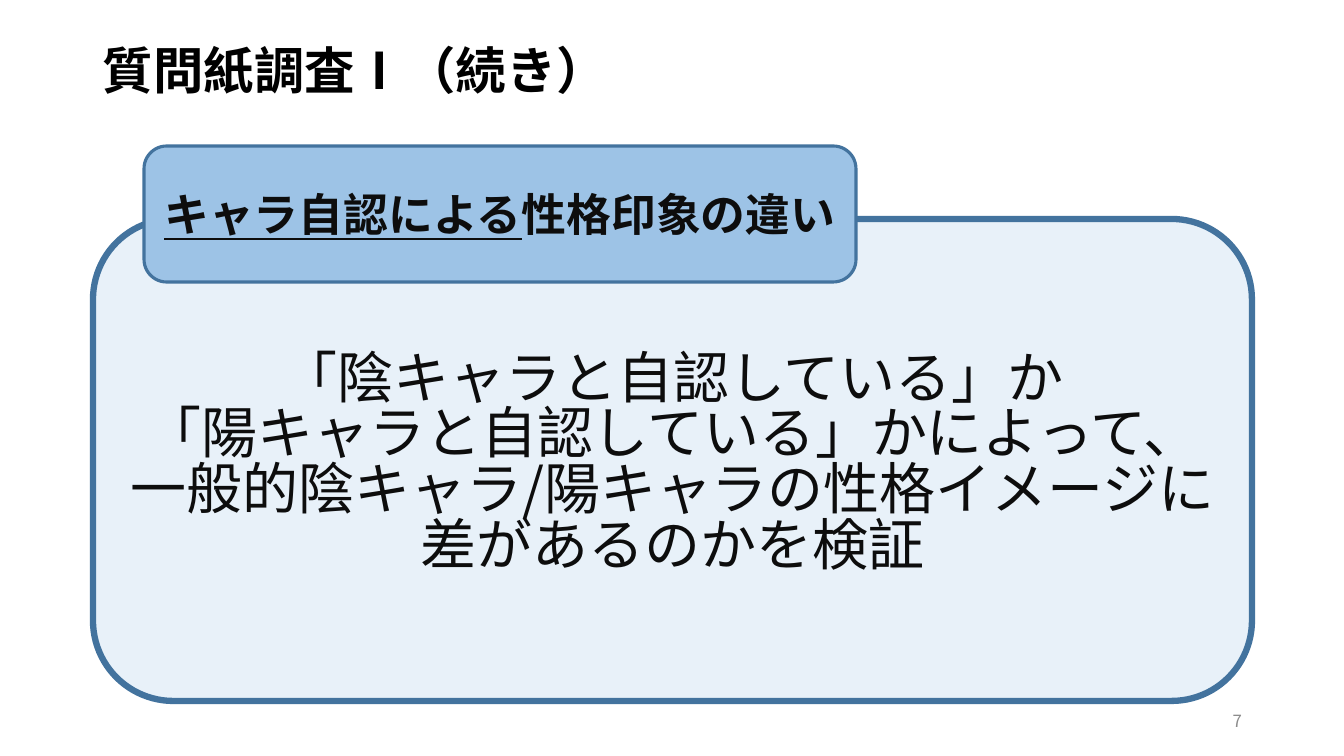
from lxml import etree
from pptx import Presentation
from pptx.dml.color import RGBColor
from pptx.enum.shapes import MSO_SHAPE
from pptx.enum.text import MSO_ANCHOR, PP_ALIGN
from pptx.oxml.ns import qn
from pptx.util import Emu, Pt

ROUNDED = MSO_SHAPE.ROUNDED_RECTANGLE
MIDDLE = MSO_ANCHOR.MIDDLE
LEFT, CENTER, RIGHT = PP_ALIGN.LEFT, PP_ALIGN.CENTER, PP_ALIGN.RIGHT

BLACK = RGBColor(0x00, 0x00, 0x00)
INK = RGBColor(0x0D, 0x0D, 0x0D)
GREY = RGBColor(0x8C, 0x8C, 0x8C)
PALE_BLUE = RGBColor(0xDE, 0xEB, 0xF7)
MID_BLUE = RGBColor(0x9D, 0xC3, 0xE6)
EDGE_BLUE = RGBColor(0x43, 0x73, 0x9E)

JP_FONT = "Noto Sans CJK JP"
TITLE_FONT = "Arial"
EMU_PER_PX = 914400 / 100.8


def px(n):
    return Emu(round(n * EMU_PER_PX))


def set_frame(shape, top_inset=5):
    tf = shape.text_frame
    tf.word_wrap = True
    tf.vertical_anchor = MIDDLE
    tf.margin_left = tf.margin_right = px(10)
    tf.margin_top, tf.margin_bottom = px(top_inset), px(5)
    return tf


def add_run(p, text, size, color, font=JP_FONT, bold=False, underline=False):
    r = p.add_run()
    r.text = text
    r.font.size = Pt(size)
    r.font.name = font
    r.font.bold = bold
    r.font.underline = underline
    r.font.color.rgb = color
    # East Asian typeface
    ea = etree.SubElement(r.font._element, qn("a:ea"))
    ea.set("typeface", JP_FONT)


def add_rounded(s, box, fill, line_width):
    sp = s.shapes.add_shape(ROUNDED, *map(px, box))
    sp.shadow.inherit = False
    sp.fill.solid()
    sp.fill.fore_color.rgb = fill
    sp.line.color.rgb = EDGE_BLUE
    sp.line.width = Pt(line_width)
    return sp


def add_label(s, box, text, size, color, align, font=JP_FONT, bold=False, spacing=1.0):
    sp = s.shapes.add_textbox(*map(px, box))
    p = set_frame(sp).paragraphs[0]
    p.alignment = align
    p.line_spacing = spacing
    add_run(p, text, size, color, font, bold)


def add_card(s, box, lines):
    sp = add_rounded(s, box, PALE_BLUE, 4.5)
    # Translucent fill
    color = sp.fill._xPr.find(qn("a:solidFill"))[0]
    etree.SubElement(color, qn("a:alpha")).set("val", "68000")
    tf = set_frame(sp, top_inset=15)
    for i, line in enumerate(lines):
        p = tf.add_paragraph() if i else tf.paragraphs[0]
        p.alignment = CENTER
        p.line_spacing = 0.83
        add_run(p, line, 40, INK)


def add_badge(s, box, underlined, plain):
    sp = add_rounded(s, box, MID_BLUE, 2.25)
    p = set_frame(sp).paragraphs[0]
    p.alignment = CENTER
    add_run(p, underlined, 32, INK, bold=True, underline=True)
    add_run(p, plain, 32, INK, bold=True)


def build_slide(prs):
    s = prs.slides.add_slide(prs.slide_layouts[6])
    # Page number
    add_label(s, (950, 701, 302, 40), "7", 12, GREY, RIGHT)
    # Research question with its heading badge
    add_card(s, (93, 219, 1159, 482), [
        "「陰キャラと自認している」か",
        "「陽キャラと自認している」かによって、"
        "一般的陰キャラ/陽キャラの性格イメージに差があるのかを検証",
    ])
    add_badge(s, (144, 146, 712, 136), "キャラ自認による", "性格印象の違い")
    # Title
    add_label(s, (93, 0, 1159, 146), "質問紙調査Ⅰ（続き）", 36, BLACK, LEFT,
              TITLE_FONT, bold=True, spacing=0.9)


def main():
    prs = Presentation()
    prs.slide_width, prs.slide_height = px(1344), px(756)
    build_slide(prs)
    prs.save("out.pptx")


if __name__ == "__main__":
    main()
